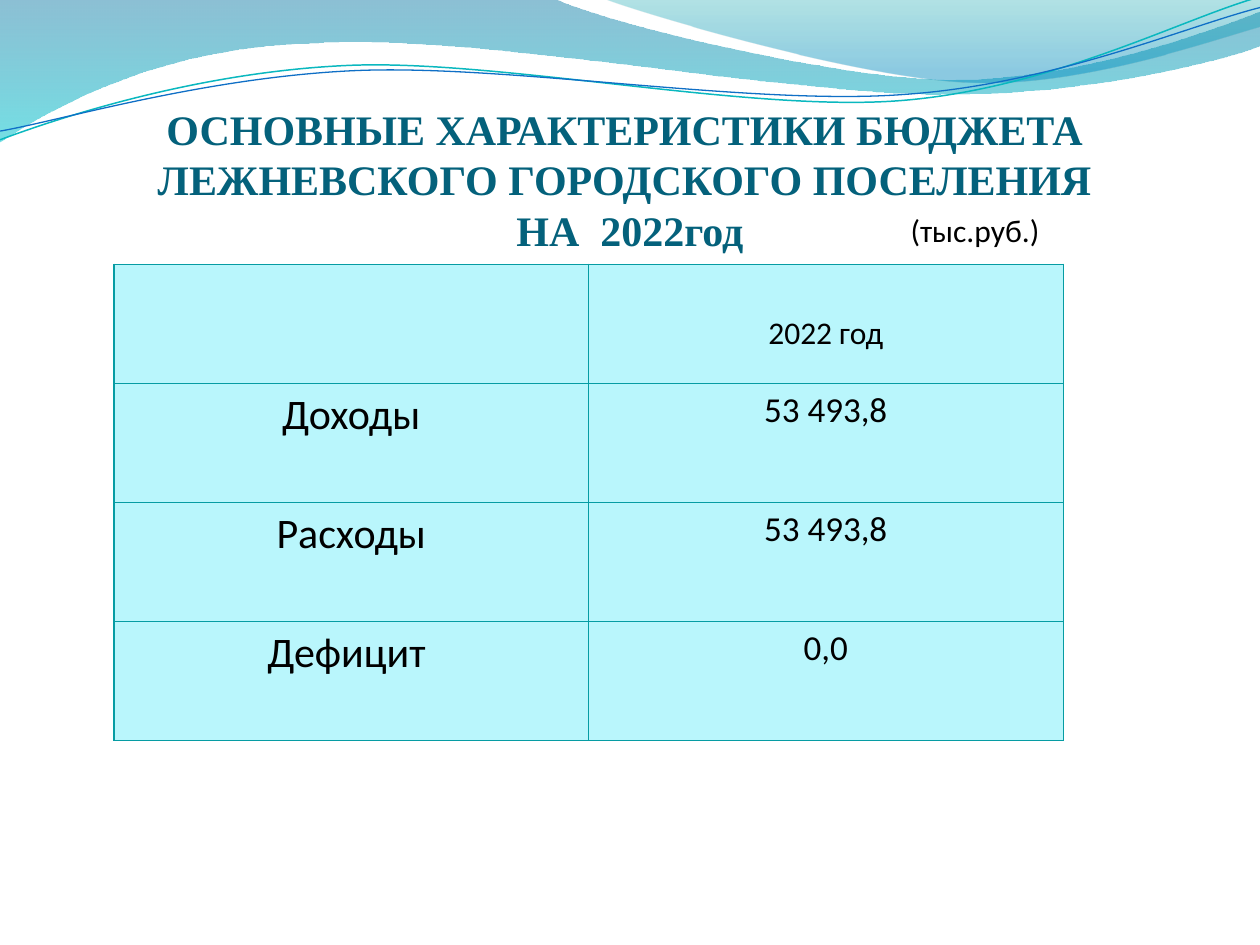
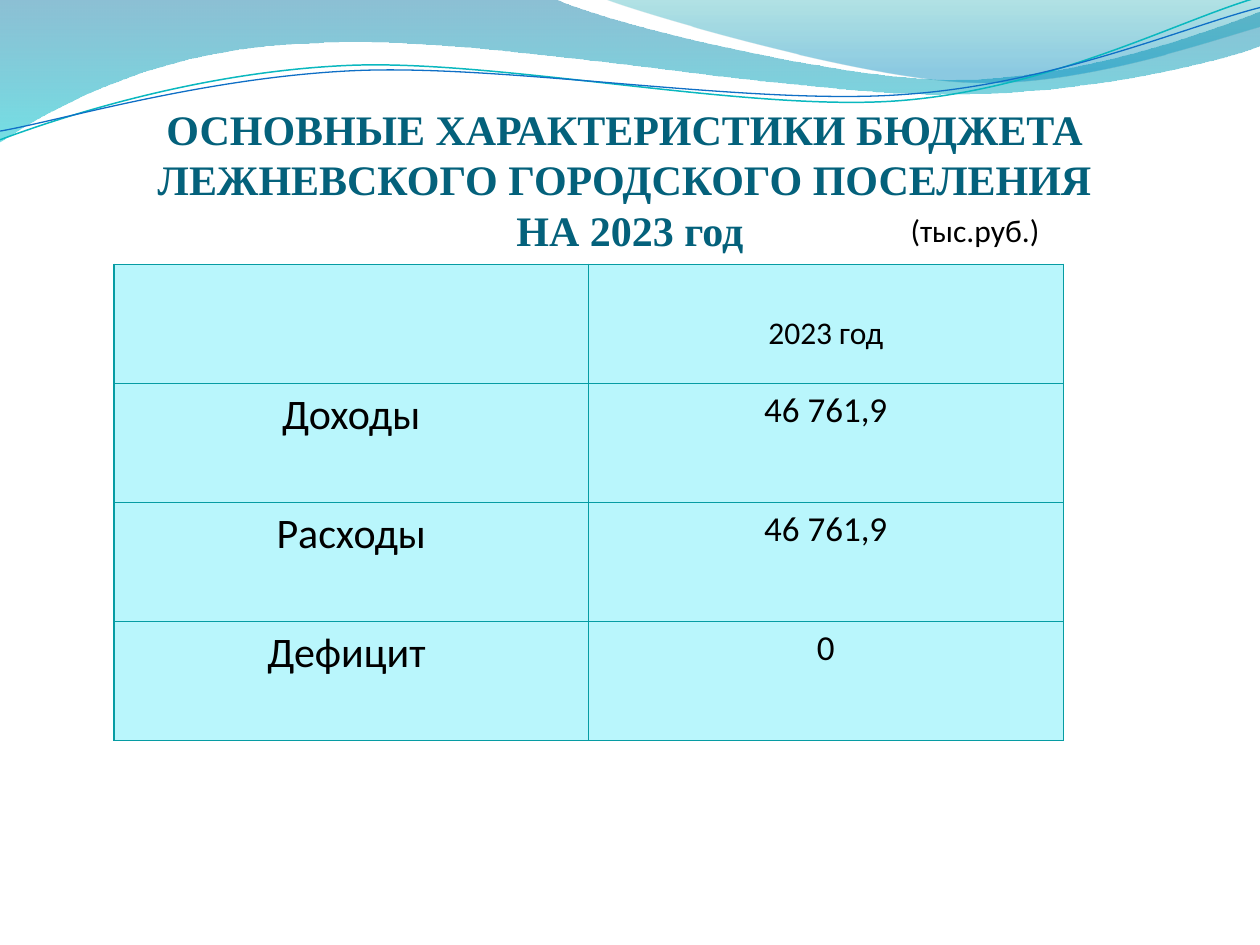
from dataclasses import dataclass

import lxml.etree
import pptx
import pptx.dml.color
import pptx.enum.text
import pptx.oxml.ns
import pptx.util

Pt = pptx.util.Pt
qn = pptx.oxml.ns.qn
CENTER = pptx.enum.text.PP_ALIGN.CENTER

# Content
TITLE_LINES = ["ОСНОВНЫЕ ХАРАКТЕРИСТИКИ БЮДЖЕТА ", "ЛЕЖНЕВСКОГО ГОРОДСКОГО ПОСЕЛЕНИЯ "]
UNIT = "(тыс.руб.)"
ROW_LABELS = ["Доходы", "Расходы", "Дефицит "]
BUDGETS = [
    {"period": "НА  2022год", "header": "2022 год", "values": ["53 493,8", "53 493,8", "0,0"]},
    {"period": "НА 2023 год", "header": "2023 год", "values": ["46 761,9", "46 761,9", "0"]},
]


@dataclass(frozen=True)
class Theme:
    title_font: str = "Times New Roman"
    body_font: str = "Calibri"
    title_color: str = "04617B"
    text_color: str = "000000"
    cell_color: str = "B9F6FC"
    border_color: str = "069CA3"
    border_width: float = 0.75
    title_size: int = 24
    label_size: int = 24
    value_size: int = 20
    note_size: int = 18


THEME = Theme()

# Layout: left, top, width, height
SLIDE_SIZE = (720, 540)
TITLE_BOX = (36, 55.4, 648, 90)
UNIT_BOX = (513.2, 117, 130.3, 28.8)
TABLE_BOX = (65.1, 151, 542.4, 272)
HEADER_DROP = 28.5

# Outlines: a start point, then steps of one point (line) or three points (curve)
BANDS = [
    {"start": (0, 0),
     "steps": [[(316.8, -0.7)],
               [(342.7, 12.2), (478.1, 45.4), (545.8, 45.4)],
               [(614.2, 45.4), (689.8, 18.7), (720, 6.5)],
               [(720.7, 26)],
               [(707.8, 31.7), (626.4, 54.7), (537.1, 54)],
               [(447.8, 54), (275, 20.2), (185, 24.5)],
               [(92.9, 25.9), (33.1, 59.8), (-0.7, 81.4)],
               [(0, 0)]],
     "stops": [(0, "0074A1", 45), (1, "00C6CF", 55)]},
    {"start": (344.9, -0.7),
     "steps": [[(366.5, 7.9), (491, 44.6), (553.7, 46.8)],
               [(616.3, 49.7), (691.9, 23), (720, 15.1)],
               [(720, 0)],
               [(344.9, -0.7)]],
     "stops": [(0, "00A1A9", 30), (0.8, "008BBF", 45)]},
]
RIPPLES = [
    {"start": (0, 79.9),
     "steps": [[(34.6, 67), (113.8, 41), (199.4, 37.4)],
               [(284.4, 33.8), (427, 64.1), (513.4, 57.6)],
               [(599.8, 51.1), (675.4, 10.8), (718.6, -1.4)]],
     "line": ("0AB8BF", 0.85)},
    {"start": (0, 74.9),
     "steps": [[(33.8, 69.1), (118.1, 43.9), (203.8, 40.3)],
               [(290.2, 36.7), (429.8, 60.5), (516.2, 54)],
               [(601.9, 48.2), (677.5, 15.1), (720, 4.3)]],
     "line": ("0F6FC6", 0.75)},
]


def rgb(color):
    return pptx.dml.color.RGBColor.from_string(color)


def points(values):
    return [Pt(value) for value in values]


def add_outline(slide, start, steps, close):
    """Draw a freeform, then merge each three-point step into one cubic curve."""
    builder = slide.shapes.build_freeform(*points(start))
    builder.add_line_segments([points(point) for step in steps for point in step], close=close)
    shape = builder.convert_to_shape()
    shape.shadow.inherit = False
    segments = iter(list(shape.element.spPr.iter(qn("a:lnTo"))))
    for step in steps:
        first, *others = [next(segments) for _ in step]
        if others:
            curve = lxml.etree.Element(qn("a:cubicBezTo"))
            first.addprevious(curve)
            for segment in (first, *others):
                curve.append(segment[0])
                segment.getparent().remove(segment)
    return shape


def add_waves(slide):
    for band in BANDS:
        shape = add_outline(slide, band["start"], band["steps"], True)
        shape.line.fill.background()
        shape.fill.gradient()
        shape.fill.gradient_angle = 270
        for stop, (position, color, _) in zip(shape.fill.gradient_stops, band["stops"]):
            stop.position = position
            stop.color.rgb = rgb(color)
        colors = list(shape.element.spPr.iter(qn("a:srgbClr")))
        for element, (_, _, opacity) in zip(colors, band["stops"]):
            lxml.etree.SubElement(element, qn("a:alpha"), val=str(opacity * 1000))
    for ripple in RIPPLES:
        shape = add_outline(slide, ripple["start"], ripple["steps"], False)
        color, width = ripple["line"]
        shape.fill.background()
        shape.line.color.rgb = rgb(color)
        shape.line.width = Pt(width)


def write(text_frame, text, size, font=THEME.body_font, color=THEME.text_color, bold=False, align=None):
    text_frame.word_wrap = True
    paragraph = text_frame.paragraphs[0]
    paragraph.text = text
    paragraph.alignment = align
    paragraph.font.name = font
    paragraph.font.size = Pt(size)
    paragraph.font.bold = bold
    paragraph.font.color.rgb = rgb(color)
    return paragraph


def add_title(slide, period):
    text_frame = slide.shapes.add_textbox(*points(TITLE_BOX)).text_frame
    text_frame.margin_left = text_frame.margin_right = text_frame.margin_bottom = 0
    text_frame.vertical_anchor = pptx.enum.text.MSO_ANCHOR.BOTTOM
    paragraph = write(text_frame, "\v".join([*TITLE_LINES, period]), THEME.title_size,
                      THEME.title_font, THEME.title_color, True, CENTER)
    paragraph.line_spacing = Pt(28.8)


def add_unit(slide):
    text_frame = slide.shapes.add_textbox(*points(UNIT_BOX)).text_frame
    text_frame.auto_size = pptx.enum.text.MSO_AUTO_SIZE.SHAPE_TO_FIT_TEXT
    write(text_frame, UNIT, THEME.note_size)


def style_cell(cell):
    properties = cell._tc.get_or_add_tcPr()
    for side in ("lnL", "lnR", "lnT", "lnB"):
        line = lxml.etree.SubElement(properties, qn("a:" + side), w=str(Pt(THEME.border_width)))
        fill = lxml.etree.SubElement(line, qn("a:solidFill"))
        lxml.etree.SubElement(fill, qn("a:srgbClr"), val=THEME.border_color)
    cell.fill.solid()
    cell.fill.fore_color.rgb = rgb(THEME.cell_color)


def add_budget_table(slide, header, values):
    rows = [("", header), *zip(ROW_LABELS, values)]
    table = slide.shapes.add_table(len(rows), 2, *points(TABLE_BOX)).table
    table.first_row = table.horz_banding = False
    for row_index, row in enumerate(rows):
        sizes = (THEME.label_size, THEME.value_size) if row_index else (THEME.note_size,) * 2
        for column_index, (text, size) in enumerate(zip(row, sizes)):
            cell = table.cell(row_index, column_index)
            style_cell(cell)
            if text:
                write(cell.text_frame, text, size, align=CENTER)
    table.cell(0, 1).margin_top = Pt(HEADER_DROP)


def main():
    presentation = pptx.Presentation()
    presentation.slide_width, presentation.slide_height = points(SLIDE_SIZE)
    for budget in BUDGETS:
        slide = presentation.slides.add_slide(presentation.slide_layouts[6])
        add_waves(slide)
        add_title(slide, budget["period"])
        add_budget_table(slide, budget["header"], budget["values"])
        add_unit(slide)
    presentation.save("out.pptx")


if __name__ == "__main__":
    main()
